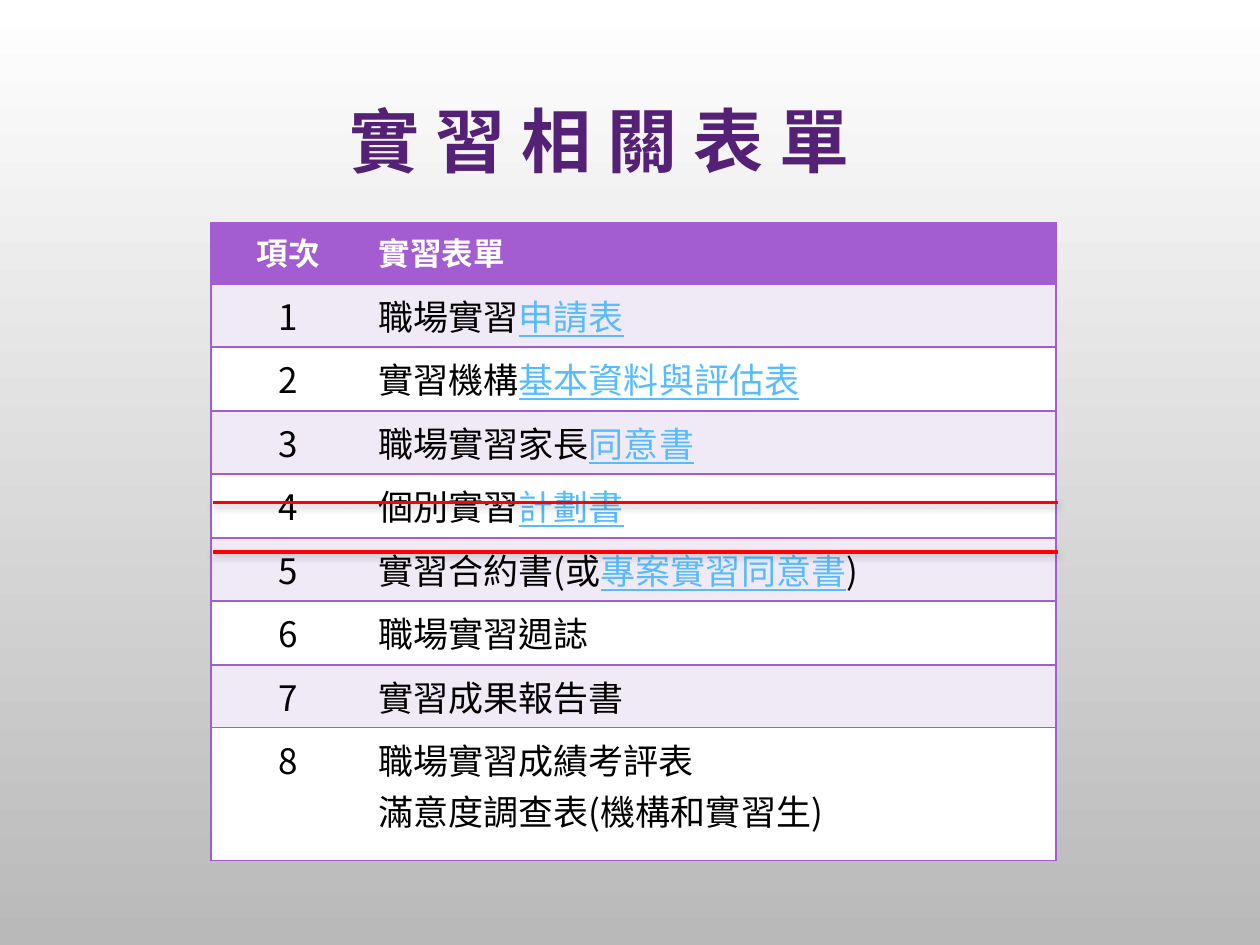
import pptx
import pptx.util
import pptx.dml.color
import pptx.enum.text
import pptx.enum.lang
import pptx.enum.shapes
import pptx.oxml.ns
from dataclasses import dataclass
from lxml import etree


@dataclass(frozen=True)
class Theme:
    top: str = "FFFFFF"
    base: str = "B9B9B9"
    title: str = "542176"
    grape: str = "A35DD1"
    pale: str = "F0EAF7"
    white: str = "FFFFFF"
    ink: str = "000000"
    link: str = "56BCFE"
    red: str = "FF0000"
    cjk: str = "Noto Sans CJK SC"
    latin: str = "Calibri"
    big: int = 40
    head: int = 18
    body: int = 20


THEME = Theme()
PX = 914400 // 126
TITLE = "實 習 相 關 表 單"
HEAD = ("項次", "實習表單")
FORMS = [
    [("職場實習", "申請表")],
    [("實習機構", "基本資料與評估表")],
    [("職場實習家長", "同意書")],
    [("個別實習", "計劃書")],
    [("實習合約書(或", "專案實習同意書", ")")],
    [("職場實習週誌",)],
    [("實習成果報告書",)],
    [("職場實習成績考評表",), ("滿意度調查表(機構和實習生)",)],
]
TITLE_BOX = (64, 67, 1071, 156)
TABLE_BOX = (211, 223, 845, 638)
COLS = (155, 690)
ROWS = [61, 63, 64, 63, 64, 63, 64, 63, 133]
RULES = (503, 552)
RULE_X = (213, 1058)

ALIGN = pptx.enum.text.PP_ALIGN
qn = pptx.oxml.ns.qn


def rgb(code):
    return pptx.dml.color.RGBColor.from_string(code)


def add(node, tag, **attrs):
    return etree.SubElement(node, qn(tag), attrs)


def style(run, size, color, face, bold=False, under=False):
    font = run.font
    font.size = pptx.util.Pt(size)
    font.bold = bold
    font.underline = under
    font.color.rgb = rgb(color)
    font.name = face
    font.language_id = pptx.enum.lang.MSO_LANGUAGE_ID.TRADITIONAL_CHINESE
    add(font._element, "a:ea", typeface=THEME.cjk)


def edge(cell, side, color):
    line = add(cell._tc.get_or_add_tcPr(), "a:" + side, w="12700")
    if color:
        add(add(line, "a:solidFill"), "a:srgbClr", val=color)
    else:
        add(line, "a:noFill")


def fill_cell(cell, lines, col, row):
    left = col == 0
    edge(cell, "lnL", THEME.grape if left else None)
    edge(cell, "lnR", None if left else THEME.grape)
    edge(cell, "lnT", THEME.grape)
    edge(cell, "lnB", THEME.grape)
    cell.fill.solid()
    back = THEME.pale if row % 2 else THEME.white
    cell.fill.fore_color.rgb = rgb(back if row else THEME.grape)
    frame = cell.text_frame
    frame.text = "\n".join(line[0] for line in lines)
    for para, line in zip(frame.paragraphs, lines):
        para.alignment = ALIGN.CENTER if left else ALIGN.LEFT
        for part in line[1:]:
            para.add_run().text = part
        for i, run in enumerate(para.runs):
            if row == 0:
                style(run, THEME.head, THEME.white, THEME.latin, bold=True)
            else:
                linked = i == 1
                color = THEME.link if linked else THEME.ink
                style(run, THEME.body, color, THEME.cjk, under=linked)


def add_title(slide):
    box = slide.shapes.add_textbox(*(n * PX for n in TITLE_BOX))
    frame = box.text_frame
    frame.word_wrap = True
    frame.vertical_anchor = pptx.enum.text.MSO_ANCHOR.MIDDLE
    frame.text = TITLE
    para = frame.paragraphs[0]
    para.alignment = ALIGN.CENTER
    para.line_spacing = 0.9
    style(para.runs[0], THEME.big, THEME.title, THEME.cjk, bold=True)


def add_forms(slide):
    place = (n * PX for n in TABLE_BOX)
    shape = slide.shapes.add_table(len(ROWS), len(COLS), *place)
    table = shape.table
    for col, wide in zip(table.columns, COLS):
        col.width = wide * PX
    for row, tall in zip(table.rows, ROWS):
        row.height = tall * PX
    data = [[[(text,)] for text in HEAD]]
    data += [[[(str(n),)], form] for n, form in enumerate(FORMS, 1)]
    for r, row in enumerate(data):
        for c, lines in enumerate(row):
            fill_cell(table.cell(r, c), lines, c, r)


def add_rule(slide, y):
    kind = pptx.enum.shapes.MSO_CONNECTOR.STRAIGHT
    start, end = RULE_X
    rule = slide.shapes.add_connector(kind, start * PX, y * PX, end * PX, y * PX)
    rule.line.color.rgb = rgb(THEME.red)
    rule.line.width = pptx.util.Pt(1.75)
    fx = add(rule._element.spPr, "a:effectLst")
    shade = add(fx, "a:outerShdw", blurRad="50800", dist="25400",
                dir="5400000", rotWithShape="0")
    add(add(shade, "a:srgbClr", val=THEME.ink), "a:alpha", val="28000")


def main():
    deck = pptx.Presentation()
    deck.slide_width = 1260 * PX
    deck.slide_height = 945 * PX
    slide = deck.slides.add_slide(deck.slide_layouts[6])
    back = slide.background.fill
    back.gradient()
    back.gradient_angle = 270
    for stop, color in zip(back.gradient_stops, (THEME.top, THEME.base)):
        stop.color.rgb = rgb(color)
    add_title(slide)
    add_forms(slide)
    for y in RULES:
        add_rule(slide, y)
    deck.save("out.pptx")


if __name__ == "__main__":
    main()
